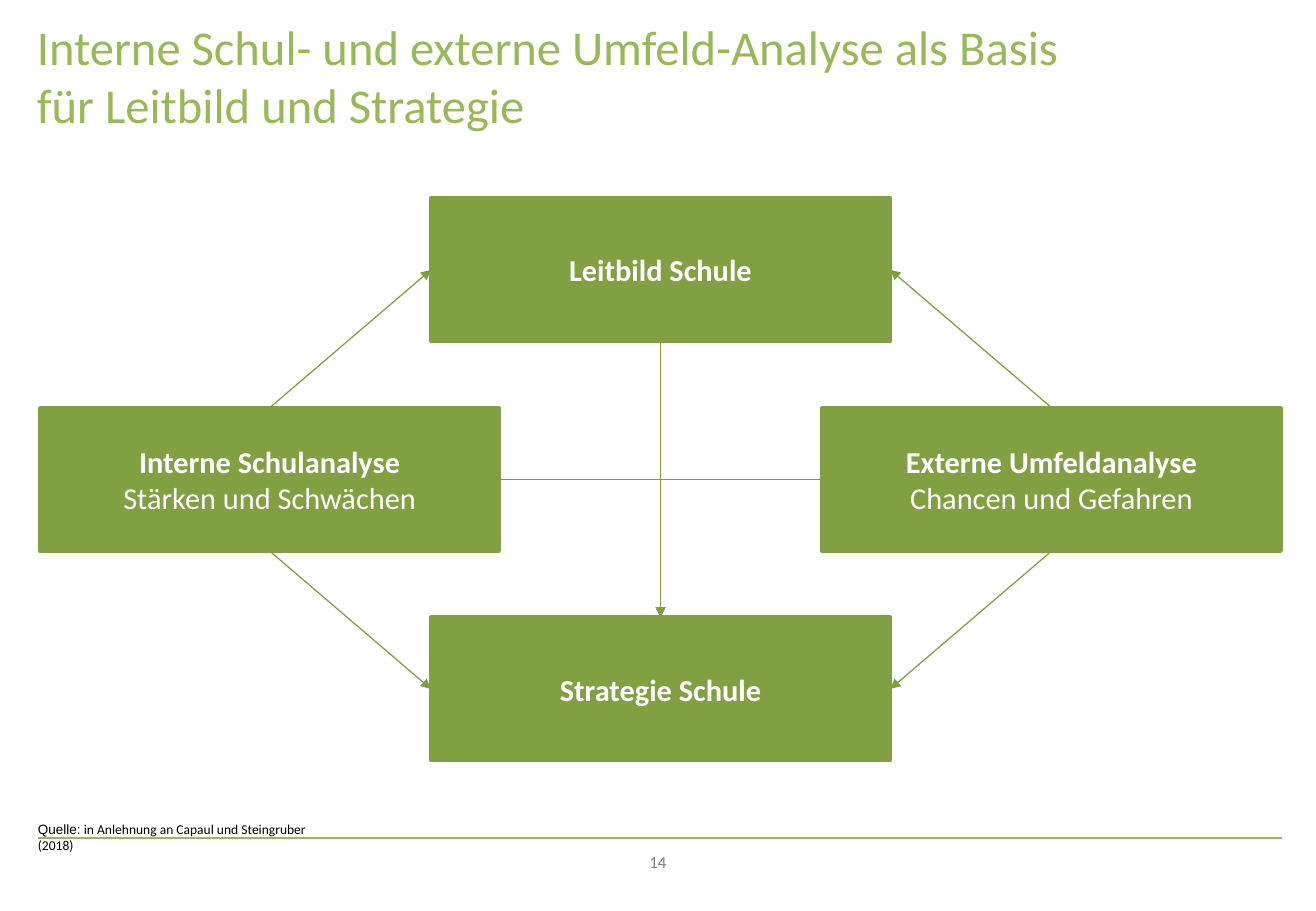
import pptx
import pptx.util
import pptx.dml.color
import pptx.enum.shapes
import pptx.enum.text
import pptx.oxml.ns
import lxml.etree

INK = {"title": "98B954", "box": "81A042", "arrow": "7F9F3E",
       "white": "FFFFFF", "grey": "808080", "black": "000000"}
ALIGN = pptx.enum.text.PP_ALIGN
ANCHOR = pptx.enum.text.MSO_ANCHOR
LINK = pptx.enum.shapes.MSO_CONNECTOR
TOP, LEFT, BOTTOM, RIGHT = range(4)


class Board:
    """Style and current slide; lengths are percent of the slide's size."""

    # Grid of boxes: origin, step and size
    x0, y0 = 3.05, 21.75
    dx, dy = 29.7, 23
    wide, high = 34.9, 15.75

    def __init__(self, deck):
        self.deck = deck
        self.slide = deck.slides.add_slide(deck.slide_layouts[6])

    def place(self, x, y):
        return (int(self.deck.slide_width * x / 100),
                int(self.deck.slide_height * y / 100))

    def color(self, name):
        return pptx.dml.color.RGBColor.from_string(INK[name])

    def style(self, run, size, ink, bold=False, face="Calibri"):
        run.font.size = pptx.util.Pt(size)
        run.font.name = face
        run.font.bold = bold
        run.font.color.rgb = self.color(ink)

    def text(self, words, x, y, w, h, size, ink,
             align=ALIGN.LEFT, anchor=ANCHOR.TOP):
        frame = self.slide.shapes.add_textbox(
            *self.place(x, y), *self.place(w, h)).text_frame
        frame.margin_left = frame.margin_right = 0
        frame.margin_top = frame.margin_bottom = 0
        frame.word_wrap = True
        frame.vertical_anchor = anchor
        frame.text = words
        para = frame.paragraphs[0]
        para.alignment = align
        for run in para.runs:
            self.style(run, size, ink)
        return para

    def box(self, col, row, words):
        shape = self.slide.shapes.add_shape(
            pptx.enum.shapes.MSO_SHAPE.RECTANGLE,
            *self.place(self.x0 + col * self.dx, self.y0 + row * self.dy),
            *self.place(self.wide, self.high))
        shape.shadow.inherit = False
        shape.fill.solid()
        shape.fill.fore_color.rgb = self.color("box")
        shape.line.color.rgb = self.color("box")
        shape.line.width = pptx.util.Pt(2)
        frame = shape.text_frame
        frame.word_wrap = True
        frame.vertical_anchor = ANCHOR.MIDDLE
        frame.text = words
        for num, para in enumerate(frame.paragraphs):
            para.alignment = ALIGN.CENTER
            self.style(para.runs[0], 18, "white", bold=num == 0)
        return shape

    def line(self, start, end, ink, kind=LINK.STRAIGHT, head=False):
        wire = self.slide.shapes.add_connector(
            kind, *self.place(*start), *self.place(*end))
        wire.line.color.rgb = self.color(ink)
        wire.line.width = pptx.util.Pt(0.75)
        name = pptx.oxml.ns.qn
        props = wire._element.spPr
        if head:
            lxml.etree.SubElement(props.find(name("a:ln")),
                                  name("a:tailEnd"), type="triangle")
        lxml.etree.SubElement(props, name("a:effectLst"))
        return wire

    def join(self, start, side, end, goal, ink, bent=False):
        kind = LINK.ELBOW if bent else LINK.STRAIGHT
        wire = self.line((0, 0), (0, 0), ink, kind, head=True)
        wire.begin_connect(start, side)
        wire.end_connect(end, goal)
        if bent:  # one corner only
            geom = wire._element.spPr.find(pptx.oxml.ns.qn("a:prstGeom"))
            geom.set("prst", "bentConnector2")


def main():
    deck = pptx.Presentation()
    deck.slide_width = pptx.util.Inches(10.83)
    deck.slide_height = pptx.util.Inches(7.5)
    board = Board(deck)

    # Footer and title
    board.text("14", 43.3, 93.5, 13.4, 2.27, 10, "grey",
               ALIGN.CENTER, ANCHOR.MIDDLE)
    board.line((2.86, 92), (97.41, 92), "title")
    board.text("Interne Schul- und externe Umfeld-Analyse als Basis\v"
               "für Leitbild und Strategie",
               2.8, 2.53, 94.5, 12.13, 28.8, "title", anchor=ANCHOR.BOTTOM)

    # Boxes
    vision = board.box(1, 0, "Leitbild Schule")
    inner = board.box(0, 1, "Interne Schulanalyse\nStärken und Schwächen")
    outer = board.box(2, 1, "Externe Umfeldanalyse\nChancen und Gefahren")
    plan = board.box(1, 2, "Strategie Schule")

    # Arrows through the centre
    board.join(vision, BOTTOM, plan, TOP, "box")
    board.join(inner, RIGHT, plan, TOP, "box", bent=True)
    board.join(outer, LEFT, plan, TOP, "box", bent=True)

    # Source note
    note = board.text("Quelle:", 2.88, 90.13, 23.2, 1.73, 8, "black")
    note.runs[0].font.name = "Arial"
    rest = note.add_run()
    rest.text = " in Anlehnung an Capaul und Steingruber (2018)"
    board.style(rest, 8, "black")

    # Outer arrows
    for start, goal in ((inner, LEFT), (outer, RIGHT)):
        board.join(start, TOP, vision, goal, "arrow")
        board.join(start, BOTTOM, plan, goal, "arrow")

    deck.save("out.pptx")


if __name__ == "__main__":
    main()
